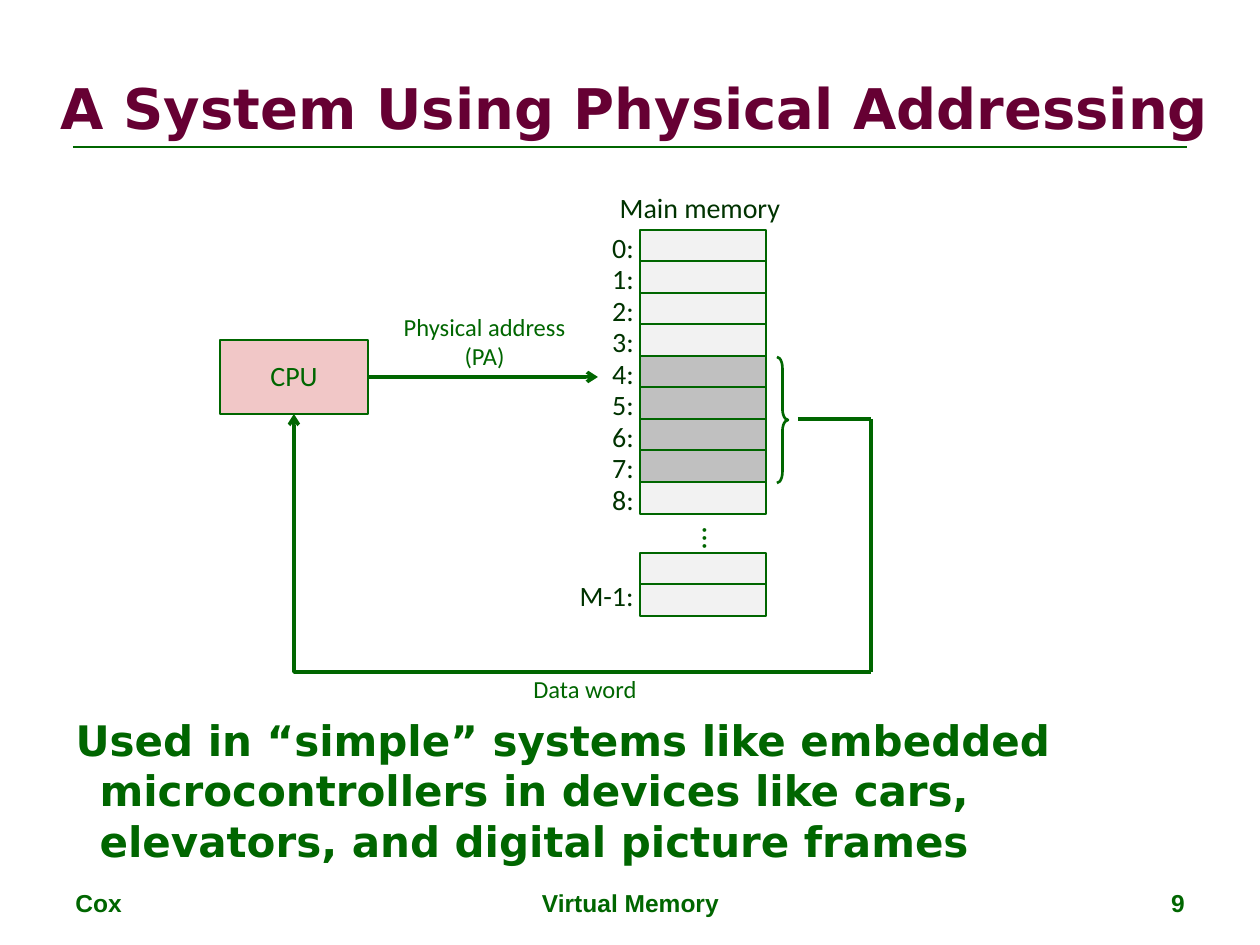
import pptx
import pptx.util
import pptx.dml.color
import pptx.enum.shapes
import pptx.enum.text
import pptx.oxml.ns
import lxml.etree

PX = 914400 / 126  # EMU in one px
INK = {"green": "006600", "dark": "003300", "wine": "660033",
       "pink": "F1C7C7", "pale": "F2F2F2", "gray": "C0C0C0"}
INK = {name: pptx.dml.color.RGBColor.from_string(code) for name, code in INK.items()}
Pt = pptx.util.Pt
Shape = pptx.enum.shapes.MSO_SHAPE
Line = pptx.enum.shapes.MSO_CONNECTOR
Align = pptx.enum.text.PP_ALIGN
Anchor = pptx.enum.text.MSO_ANCHOR
Fit = pptx.enum.text.MSO_AUTO_SIZE
qn = pptx.oxml.ns.qn


def px(*nums):
    return [round(num * PX) for num in nums]


def write(shape, words, size, ink, face="Calibri", bold=False,
          align=Align.CENTER, gap=None, before=None):
    frame = shape.text_frame
    frame.text = words
    for para in frame.paragraphs:
        para.alignment = align
        para.line_spacing = gap
        para.space_before = before
        para.font.name, para.font.size, para.font.bold = face, Pt(size), bold
        para.font.color.rgb = INK[ink]
    return frame


deck = pptx.Presentation()
deck.slide_width, deck.slide_height = px(1260, 945)
slide = deck.slides.add_slide(deck.slide_layouts[1])
shapes = slide.shapes

# Title and body
title, body = slide.placeholders
title.left, title.top, title.width, title.height = px(48, 53, 1201, 108)
body.left, body.top, body.width, body.height = px(63, 708, 1145, 121)
frame = write(title, "A System Using Physical Addressing", 32, "wine",
              "DejaVu Sans", True, Align.LEFT)
frame.vertical_anchor = Anchor.MIDDLE
frame.auto_size = Fit.NONE
frame = write(body, "Used in “simple” systems like embedded microcontrollers "
              "in devices like cars, elevators, and digital picture frames",
              24, "green", "DejaVu Sans", True, Align.LEFT)
frame.auto_size = Fit.NONE
props = frame.paragraphs[0]._p.get_or_add_pPr()
hang = px(24)[0]
props.set("marL", str(hang))
props.set("indent", str(-hang))
lxml.etree.SubElement(props, qn("a:buNone"))

# Memory cells: nine from the top, two at the end
tops = [230 + 63 * row // 2 for row in range(9)] + [553, 584]
cells = [(Shape.RECTANGLE, 640, top, 126, 32, "gray" if 4 <= row <= 7 else "pale", 1.5)
         for row, top in enumerate(tops)]

# Boxes: cells, brace, CPU
boxes = cells + [(Shape.RIGHT_BRACE, 777, 357, 11, 126, None, 1.5),
                 (Shape.RECTANGLE, 220, 340, 148, 74, "pink", 1)]
for kind, x, y, w, h, fill, width in boxes:
    box = shapes.add_shape(kind, *px(x, y, w, h))
    box.shadow.inherit = False
    if fill:
        box.fill.solid()
        box.fill.fore_color.rgb = INK[fill]
    else:
        box.fill.background()
        box.adjustments[0] = 1
    box.line.color.rgb = INK["green"]
    box.line.width = Pt(width)
cpu = box
frame = write(cpu, "CPU", 16, "green", gap=0.98)
frame.word_wrap = False
frame.vertical_anchor = Anchor.MIDDLE

# Memory labels
labels = [(599, top - 1, 48, f"{row}:") for row, top in enumerate(tops[:9])]
labels += [(566, 577, 81, "M-1:"), (604, 189, 192, "Main memory")]
for x, y, w, words in labels:
    box = shapes.add_textbox(*px(x, y, w, 43))
    frame = write(box, words, 16, "dark", gap=0.88, before=Pt(6))
    frame.word_wrap = False
    frame.auto_size = Fit.SHAPE_TO_FIT_TEXT

# Flow labels and the dots
for x, y, w, h, words, size in [
        (388, 306, 193, 72, "Physical address\n(PA)", 14),
        (519, 668, 132, 43, "Data word", 14),
        (651, 514, 126, 32, "...", 18)]:
    box = shapes.add_textbox(*px(x, y, w, h))
    frame = write(box, words, size, "green", gap=0.98)
    frame.word_wrap = False
    frame.vertical_anchor = Anchor.MIDDLE
frame._txBody.bodyPr.set("vert", "eaVert")
frame.paragraphs[0]._p.get_or_add_pPr().set("rtl", "1")

# Lines and arrows
for kind, ends, width, arrow in [
        (Line.STRAIGHT, (73, 147, 1187, 147), 1.5, False),
        (Line.STRAIGHT, (798, 419, 871, 419), 2, False),
        (Line.STRAIGHT, (871, 419, 871, 672), 2, False),
        (Line.ELBOW, (871, 672, 294, 414), 2, True),
        (Line.STRAIGHT, (368, 377, 598, 377), 2, True)]:
    wire = shapes.add_connector(kind, *px(*ends))
    wire.line.color.rgb = INK["green"]
    wire.line.width = Pt(width)
    if arrow:
        lxml.etree.SubElement(wire.line._get_or_add_ln(), qn("a:tailEnd"), type="arrow")
    lxml.etree.SubElement(wire._element.spPr, qn("a:effectLst"))
    if kind == Line.ELBOW:
        guides = wire._element.spPr.find(qn("a:prstGeom")).get_or_add_avLst()
        lxml.etree.SubElement(guides, qn("a:gd"), name="adj1", fmla="val 100000")
wire.begin_connect(cpu, 3)

# Footer
for x, w, words, align in [(63, 294, "Cox", Align.LEFT),
                           (431, 399, "Virtual Memory", Align.CENTER),
                           (903, 294, "9", Align.RIGHT)]:
    box = shapes.add_textbox(*px(x, 882, w, 44))
    frame = write(box, words, 14, "green", "Arial", True, align)
    frame.word_wrap = True

deck.save("out.pptx")
